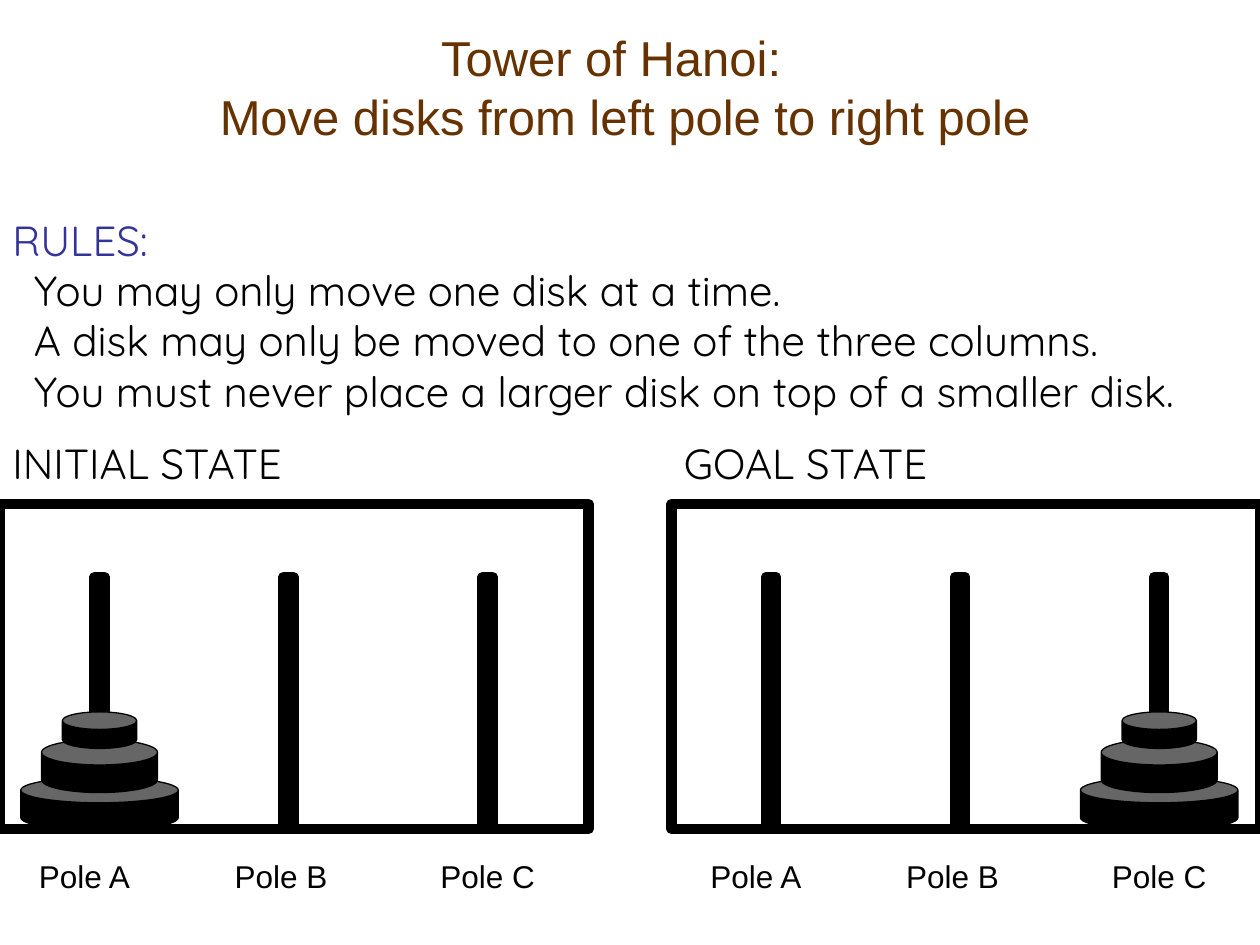
from pptx import Presentation
from pptx.dml.color import RGBColor
from pptx.enum.shapes import MSO_SHAPE
from pptx.enum.text import MSO_ANCHOR, MSO_AUTO_SIZE, PP_ALIGN
from pptx.util import Inches, Pt

COLORS = {"ink": "000000", "title": "663300", "rules": "333399"}
PANEL_WIDTH, PANEL_HEIGHT, PANEL_TOP = 4.67, 2.58, 4
FLOOR = PANEL_TOP + PANEL_HEIGHT
POLE_CENTERS = (0.79, 2.29, 3.87)
LABEL_CENTERS = (0.67, 2.23, 3.87)
POLE_WIDTH, POLE_HEIGHT = 0.08, 2
DISKS = ((1.25, 0.42, 6.17), (0.92, 0.42, 5.87), (0.59, 0.29, 5.65))  # width, height, top
RULES = (
    "You may only move one disk at a time.",
    "A disk may only be moved to one of the three columns.",
    "You must never place a larger disk on top of a smaller disk.",
)


def color(name):
    return RGBColor.from_string(COLORS[name])


def write(para, text, size=24, font="Quicksand", ink="ink", align=PP_ALIGN.LEFT,
          left=0, right=0):
    """Fill a paragraph; left and right are its margins in inches."""
    span = para.add_run()
    span.text = text
    span.font.size = Pt(size)
    span.font.name = font
    span.font.color.rgb = color(ink)
    para.alignment = align
    properties = para._p.get_or_add_pPr()
    properties.set("marL", str(Inches(left)))
    properties.set("marR", str(Inches(right)))


def add_box(page, left, top, width, height):
    box = page.shapes.add_textbox(*map(Inches, (left, top, width, height)))
    box.text_frame.word_wrap = True
    return box.text_frame


def add_solid(group, kind, left, top, width, height, line=6, filled=True):
    shape = group.shapes.add_shape(kind, *map(Inches, (left, top, width, height)))
    shape.shadow.inherit = False
    if filled:
        shape.fill.solid()
        shape.fill.fore_color.rgb = color("ink")
    else:
        shape.fill.background()
    shape.line.color.rgb = color("ink")
    shape.line.width = Pt(line)
    return shape


def add_title(page):
    title = page.shapes.title
    title.left, title.top, title.width, title.height = map(Inches, (0.25, 0.17, 9.42, 1.03))
    frame = title.text_frame
    frame.auto_size = MSO_AUTO_SIZE.NONE
    frame.vertical_anchor = MSO_ANCHOR.TOP
    style = dict(size=28, font="Arial", ink="title", align=PP_ALIGN.CENTER)
    write(frame.paragraphs[0], "Tower of Hanoi:", right=0.22, **style)
    write(frame.add_paragraph(), "Move disks from left pole to right pole", **style)


def add_rules(page):
    frame = add_box(page, 0, 1.65, 10, 1.7)
    write(frame.paragraphs[0], "RULES:", ink="rules")
    for rule in RULES:
        write(frame.add_paragraph(), rule, left=0.17)


def add_state(page, heading, left, stacked_pole):
    """Draw one panel with all disks on the pole of the given index."""
    write(add_box(page, left, 3.42, PANEL_WIDTH, 0.5).paragraphs[0], heading)
    group = page.shapes.add_group_shape()
    add_solid(group, MSO_SHAPE.RECTANGLE, left, PANEL_TOP, PANEL_WIDTH, PANEL_HEIGHT,
              filled=False)
    for center in POLE_CENTERS:
        add_solid(group, MSO_SHAPE.RECTANGLE, left + center - POLE_WIDTH / 2,
                  FLOOR - POLE_HEIGHT, POLE_WIDTH, POLE_HEIGHT)
    middle = left + POLE_CENTERS[stacked_pole]
    for width, height, top in DISKS:
        disk = add_solid(group, MSO_SHAPE.CAN, middle - width / 2, top, width, height,
                         line=0.75)
        disk.adjustments[0] = 0.479
    for letter, center in zip("ABC", LABEL_CENTERS):
        frame = add_box(page, left + center - 0.6, 6.75, 1.2, 0.4)
        write(frame.paragraphs[0], f"Pole {letter}", size=18, font="Arial",
              align=PP_ALIGN.CENTER)


def main():
    deck = Presentation()
    deck.slide_width, deck.slide_height = Inches(10), Inches(7.5)
    page = deck.slides.add_slide(deck.slide_layouts[5])
    add_title(page)
    add_rules(page)
    add_state(page, "INITIAL STATE", 0, stacked_pole=0)
    add_state(page, "GOAL STATE", 10 - PANEL_WIDTH, stacked_pole=2)
    deck.save("out.pptx")


if __name__ == "__main__":
    main()
